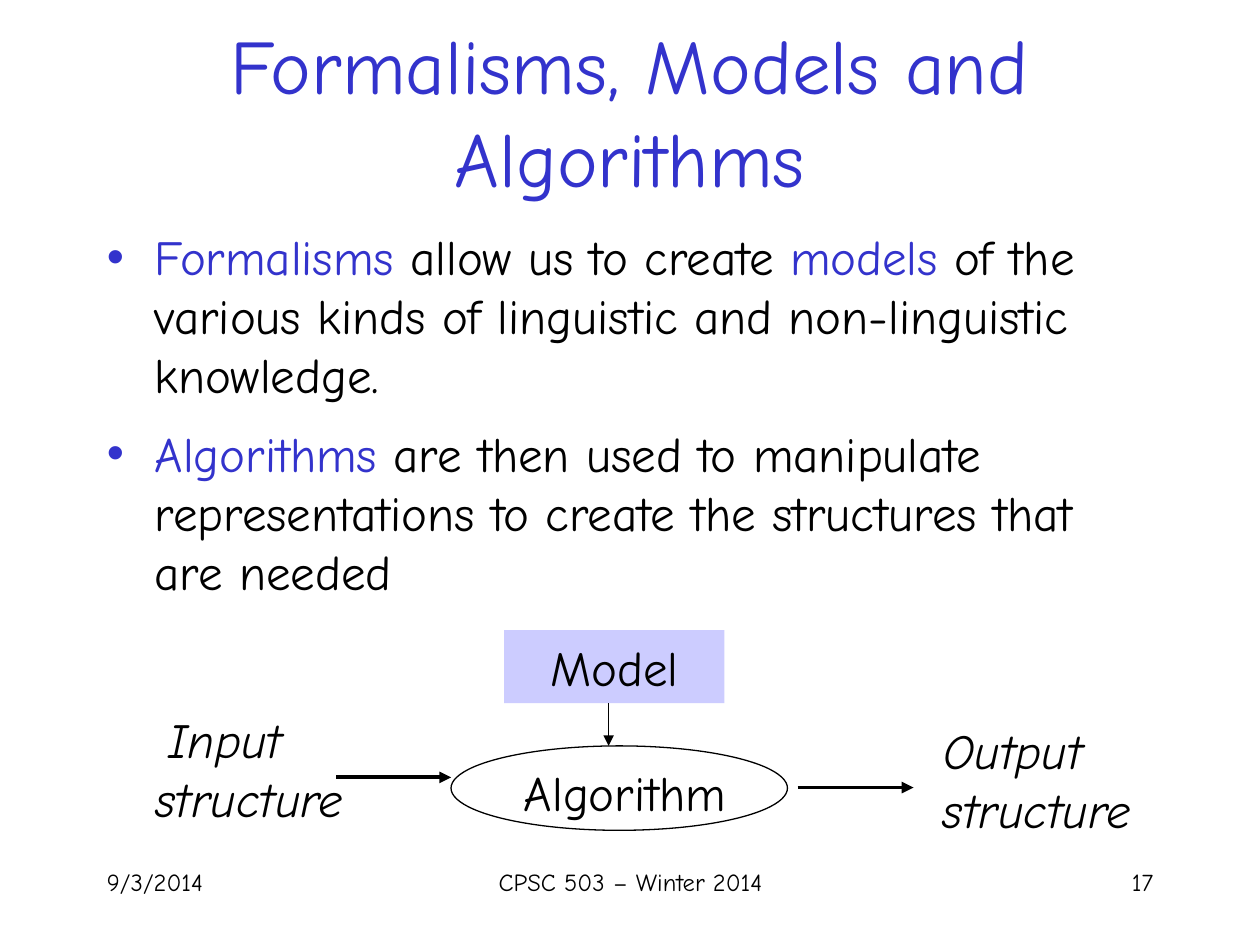
from lxml.etree import SubElement
from pptx import Presentation
from pptx.dml.color import RGBColor
from pptx.enum.shapes import MSO_CONNECTOR, MSO_SHAPE
from pptx.enum.text import MSO_ANCHOR, MSO_AUTO_SIZE, PP_ALIGN
from pptx.oxml.ns import qn
from pptx.util import Inches, Pt

FONT = "Comic Neue"
BLACK = RGBColor(0x00, 0x00, 0x00)
BLUE = RGBColor(0x33, 0x33, 0xCC)
LILAC = RGBColor(0xCC, 0xCC, 0xFF)


def add_run(p, text, size=28, color=BLACK, italic=False):
    """Append a formatted run to a paragraph."""
    r = p.add_run()
    r.text = text
    r.font.name = FONT
    r.font.size = Pt(size)
    r.font.color.rgb = color
    r.font.italic = italic


def hang(p, bullet=None):
    """Give a paragraph a hanging indent, space before and maybe a bullet."""
    p.space_before = Pt(5.6)
    pPr = p._p.get_or_add_pPr()
    pPr.set("marL", str(Inches(0.38)))
    pPr.set("indent", str(-Inches(0.38)))
    if bullet:
        color = SubElement(pPr, qn("a:buClr"))
        SubElement(color, qn("a:srgbClr")).set("val", str(BLUE))
        SubElement(pPr, qn("a:buFont")).set("typeface", "Arial")
        SubElement(pPr, qn("a:buChar")).set("char", bullet)


def add_box(s, x, y, w, h):
    """Add a wrapping text box and return its text frame."""
    tf = s.shapes.add_textbox(Inches(x), Inches(y), Inches(w), Inches(h)).text_frame
    tf.word_wrap = True
    return tf


def add_footer(s, x, w, text, align):
    """Add one of the texts along the foot of the slide."""
    p = add_box(s, x, 6.83, w, 0.5).paragraphs[0]
    p.alignment = align
    add_run(p, text, size=14)


def add_label(tf, text, italic=False):
    """Write a centred diagram label in a text frame."""
    p = tf.paragraphs[0]
    p.alignment = PP_ALIGN.CENTER
    hang(p)
    add_run(p, text, italic=italic)


def add_shape(s, kind, x, y, w, h, fill=None, line=None):
    """Add a preset shape with an optional fill and outline."""
    sp = s.shapes.add_shape(kind, Inches(x), Inches(y), Inches(w), Inches(h))
    sp.shadow.inherit = False
    if fill is None:
        sp.fill.background()
    else:
        sp.fill.solid()
        sp.fill.fore_color.rgb = fill
    if line is None:
        sp.line.fill.background()
    else:
        sp.line.color.rgb = line
        sp.line.width = Pt(0.75)
    return sp


def add_arrow(s, x1, y1, x2, y2, width):
    """Add a straight black arrow."""
    c = s.shapes.add_connector(
        MSO_CONNECTOR.STRAIGHT, Inches(x1), Inches(y1), Inches(x2), Inches(y2))
    c.line.color.rgb = BLACK
    c.line.width = Pt(width)
    SubElement(c.line._get_or_add_ln(), qn("a:tailEnd")).set("type", "triangle")
    SubElement(c._element.spPr, qn("a:effectLst"))


def add_title(s, text):
    """Place and format the title placeholder."""
    sp = s.shapes.title
    sp.left, sp.top, sp.width, sp.height = map(Inches, (0.75, 0.25, 8.5, 1.25))
    tf = sp.text_frame
    tf.auto_size = MSO_AUTO_SIZE.NONE
    tf.vertical_anchor = MSO_ANCHOR.MIDDLE
    p = tf.paragraphs[0]
    p.alignment = PP_ALIGN.CENTER
    add_run(p, text, size=44, color=BLUE)


def add_bullets(s, items):
    """Add the bulleted body text, each item a list of text and colour."""
    tf = add_box(s, 0.75, 1.75, 8.17, 3.08)
    for i, runs in enumerate(items):
        p = tf.add_paragraph() if i else tf.paragraphs[0]
        p.space_after = Pt(6)
        hang(p, bullet="•")
        for text, color in runs:
            add_run(p, text, color=color)


def add_diagram(s):
    """Draw the flow from input through the algorithm to output."""
    add_label(add_box(s, 0.58, 5.58, 2.42, 0.67), "Input structure", italic=True)
    model = add_shape(s, MSO_SHAPE.RECTANGLE, 4, 5, 1.75, 0.58, fill=LILAC)
    add_label(model.text_frame, "Model")
    add_label(add_box(s, 3.75, 6, 2.42, 0.67), "Algorithm")
    add_shape(s, MSO_SHAPE.OVAL, 3.58, 5.92, 2.67, 0.67, line=BLACK)
    add_label(add_box(s, 6.83, 5.67, 2.42, 0.67), "Output structure", italic=True)
    add_arrow(s, 4.83, 5.58, 4.83, 5.92, 0.75)
    add_arrow(s, 2.67, 6.17, 3.58, 6.17, 2.25)
    add_arrow(s, 6.33, 6.25, 7.25, 6.25, 2.25)


def main():
    """Build the slide and save it."""
    prs = Presentation()
    prs.slide_width, prs.slide_height = Inches(10), Inches(7.5)
    s = prs.slides.add_slide(prs.slide_layouts[5])
    add_footer(s, 0.75, 2.08, "9/3/2014", PP_ALIGN.LEFT)
    add_footer(s, 3.42, 3.17, "CPSC 503 – Winter 2014", PP_ALIGN.CENTER)
    add_footer(s, 7.17, 2.08, "17", PP_ALIGN.RIGHT)
    add_title(s, "Formalisms, Models and Algorithms")
    add_bullets(s, [
        [("Formalisms ", BLUE), ("allow us to create ", BLACK), ("models", BLUE),
         (" of the various kinds of linguistic and non-linguistic knowledge.", BLACK)],
        [("Algorithms", BLUE),
         (" are then used to manipulate representations to create the structures"
          " that are needed", BLACK)],
    ])
    add_diagram(s)
    prs.save("out.pptx")


if __name__ == "__main__":
    main()
